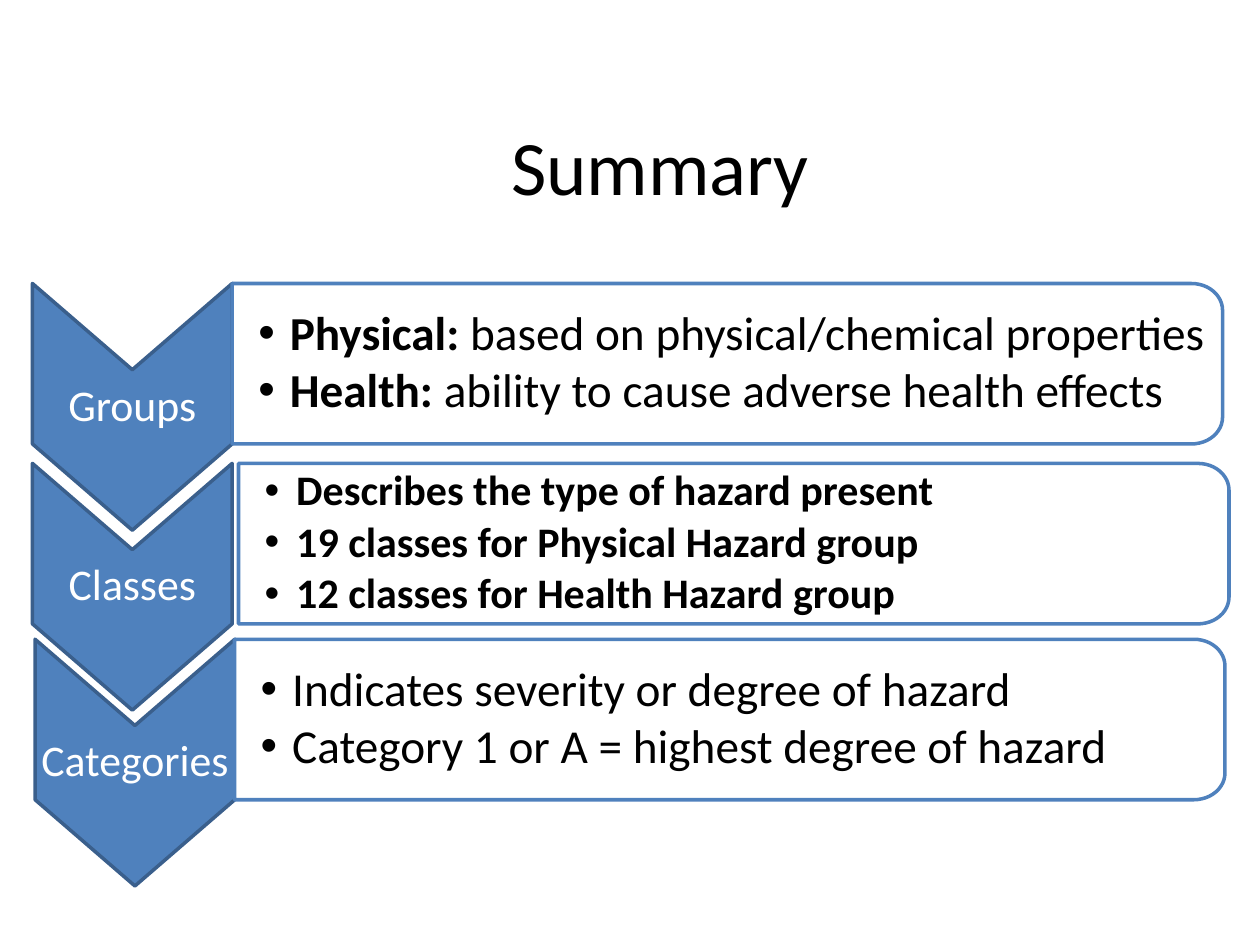
from dataclasses import dataclass
from math import cos, pi, sin

from lxml.etree import SubElement
from pptx import Presentation
from pptx.dml.color import RGBColor as RGB
from pptx.enum.text import MSO_ANCHOR as Anchor, PP_ALIGN as Align
from pptx.oxml.ns import qn
from pptx.util import Pt


@dataclass(frozen=True)
class Theme:
    font: str = "Calibri"
    accent: str = "4F81BD"
    edge: str = "3A5F8C"
    light: str = "FFFFFF"
    dark: str = "000000"
    title: int = 44
    label: int = 25
    line: int = 2


THEME = Theme()
TITLE = "Summary"

# Label, chevron left, panel left, top, body size, bullets as (bold, plain)
ROWS = [
    ("Groups", 18.5, 132.6, 162, 27, [
        ("Physical:", " based on physical/chemical properties"),
        ("Health:", " ability to cause adverse health effects")]),
    ("Classes", 18.5, 136.3, 264.8, 24, [
        ("Describes the type of hazard present", ""),
        ("19 classes for Physical Hazard group", ""),
        ("12 classes for Health Hazard group", "")]),
    ("Categories", 20, 134, 365.3, 27, [
        ("", "Indicates severity or degree of hazard"),
        ("", "Category 1 or A = highest degree of hazard")]),
]

CHEVRON_W, CHEVRON_H, NOTCH = 114.2, 141, 49.3
PANEL_W, PANEL_H = 566, CHEVRON_H - NOTCH
CORNER_W, CORNER_H, ARC_STEPS = 17.8, 15.2, 12
INDENT = 18


def write(sp, paragraphs, *, size, color, align=Align.LEFT, insets=(7.2, 3.6, 7.2, 3.6),
          spacing=1.0, after=0, bullet=False):
    """Fill a shape with paragraphs, each a (bold, plain) pair of strings."""
    tf = sp.text_frame
    tf.word_wrap = True
    tf.vertical_anchor = Anchor.MIDDLE
    tf.margin_left, tf.margin_top, tf.margin_right, tf.margin_bottom = map(Pt, insets)
    for i, parts in enumerate(paragraphs):
        p = tf.paragraphs[0] if i == 0 else tf.add_paragraph()
        if bullet:
            pPr = p._p.get_or_add_pPr()
            pPr.set("marL", str(Pt(INDENT)))
            pPr.set("indent", str(-Pt(INDENT)))
            SubElement(pPr, qn("a:buFont")).set("typeface", "Arial")
            SubElement(pPr, qn("a:buChar")).set("char", "•")
        p.alignment = align
        p.line_spacing = spacing
        p.space_after = Pt(after)
        for text, bold in zip(parts, (True, False)):
            if text:
                r = p.add_run()
                r.text = text
                r.font.name = THEME.font
                r.font.size = Pt(size)
                r.font.bold = bold
                r.font.color.rgb = RGB.from_string(color)


def add_outline(shapes, points, fill, line):
    start, *rest = [(Pt(x), Pt(y)) for x, y in points]
    builder = shapes.build_freeform(*start)
    builder.add_line_segments(rest, close=True)
    sp = builder.convert_to_shape()
    sp.shadow.inherit = False
    sp.fill.solid()
    sp.fill.fore_color.rgb = RGB.from_string(fill)
    sp.line.color.rgb = RGB.from_string(line)
    sp.line.width = Pt(THEME.line)
    return sp


def chevron_points(x, y):
    middle, right = x + CHEVRON_W / 2, x + CHEVRON_W
    return [(right, y), (right, y + PANEL_H), (middle, y + CHEVRON_H),
            (x, y + PANEL_H), (x, y), (middle, y + NOTCH)]


def panel_points(x, y):
    """Rectangle with both right corners rounded."""
    cx = x + PANEL_W - CORNER_W
    angles = [pi / 2 * i / ARC_STEPS for i in range(ARC_STEPS + 1)]
    arc = [(cx + CORNER_W * sin(a), CORNER_H * (1 - cos(a))) for a in angles]
    upper = [(px, y + dy) for px, dy in arc]
    lower = [(px, y + PANEL_H - dy) for px, dy in reversed(arc)]
    return [(x, y), *upper, *lower, (x, y + PANEL_H)]


def main():
    prs = Presentation()
    prs.slide_width, prs.slide_height = Pt(720), Pt(540)
    shapes = prs.slides.add_slide(prs.slide_layouts[6]).shapes

    for label, chevron_x, panel_x, y, size, bullets in ROWS:
        chevron = add_outline(shapes, chevron_points(chevron_x, y), THEME.accent, THEME.edge)
        write(chevron, [("", label)], size=THEME.label, color=THEME.light,
              align=Align.CENTER, insets=(1.2, 57, 1.2, 57), spacing=0.9, after=8.75)
        panel = add_outline(shapes, panel_points(panel_x, y), THEME.light, THEME.accent)
        write(panel, bullets, size=size, color=THEME.dark,
              insets=(15, 6.5, 6.5, 6.5), spacing=0.9, after=3.5, bullet=True)

    title = shapes.add_textbox(Pt(53.3), Pt(49), Pt(648), Pt(90))
    write(title, [("", TITLE)], size=THEME.title, color=THEME.dark, align=Align.CENTER)
    prs.save("out.pptx")


if __name__ == "__main__":
    main()
